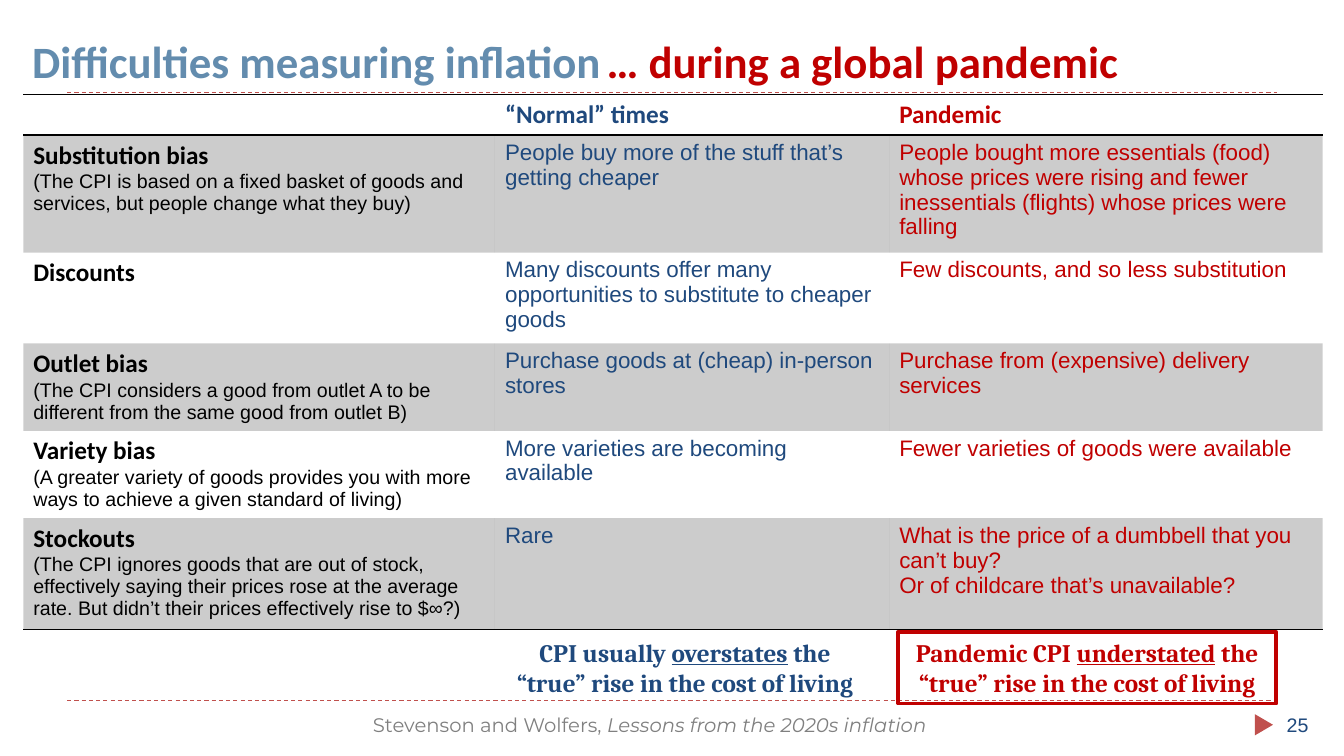
import pptx
import pptx.dml.color
import pptx.enum.dml
import pptx.enum.shapes
import pptx.enum.text
import pptx.oxml
import pptx.oxml.ns
import pptx.util

COLORS = {"ink": "000000", "navy": "1F497D", "red": "C00000",
          "steel": "638CAE", "rose": "C0504D", "gray": "808080"}
ALIGN = pptx.enum.text.PP_ALIGN
SHAPE = pptx.enum.shapes.MSO_SHAPE
PLAIN = "{2D5ABB26-0587-4C30-8999-92F81FD0307C}"


def rgb(name):
    return pptx.dml.color.RGBColor.from_string(COLORS[name])


def node(tag, **attrs):
    item = pptx.oxml.parse_xml(f"<a:{tag} {pptx.oxml.ns.nsdecls('a')}/>")
    for key, value in attrs.items():
        item.set(key, str(value))
    return item


def write(para, text, size=16, face="Arial", color="ink", bold=False,
          italic=False, under=False):
    run = para.add_run()
    run.text = text
    font = run.font
    font.size = pptx.util.Pt(size)
    font.name = face
    font.bold = bold
    font.italic = italic
    font.underline = under
    font.color.rgb = rgb(color)


class Page:
    head = {"size": 18, "face": "Calibri", "bold": True}
    title = {"size": 32, "face": "Calibri", "bold": True}
    foot = {"size": 14, "face": "Montserrat", "color": "gray"}
    note = {"size": 18, "face": "Cambria", "bold": True}

    def __init__(self):
        self.deck = pptx.Presentation()
        self.deck.slide_width = pptx.util.Inches(13.33)
        self.deck.slide_height = pptx.util.Inches(7.5)
        self.slide = self.deck.slides.add_slide(self.deck.slide_layouts[6])
        self.shapes = self.slide.shapes

    def col(self, share):
        return round(self.deck.slide_width * share / 100)

    def row(self, share):
        return round(self.deck.slide_height * share / 100)

    def area(self, left, top, width, height):
        return self.col(left), self.row(top), self.col(width), self.row(height)

    def rule(self, top):
        line = self.shapes.add_connector(
            pptx.enum.shapes.MSO_CONNECTOR.STRAIGHT,
            self.col(5), self.row(top), self.col(95), self.row(top))
        line.line.color.rgb = rgb("rose")
        line.line.width = pptx.util.Pt(0.75)
        line.line.dash_style = pptx.enum.dml.MSO_LINE.DASH
        line._element.spPr.append(node("effectLst"))

    def arrow(self, *area):
        mark = self.shapes.add_shape(SHAPE.ISOSCELES_TRIANGLE, *self.area(*area))
        mark.rotation = 90
        mark.shadow.inherit = False
        mark.fill.solid()
        mark.fill.fore_color.rgb = rgb("rose")
        mark.line.fill.background()

    def fill(self, frame, parts, style, align=ALIGN.LEFT, low=False):
        frame.word_wrap = True
        anchor = pptx.enum.text.MSO_ANCHOR
        frame.vertical_anchor = anchor.BOTTOM if low else anchor.TOP
        para = frame.paragraphs[0]
        para.alignment = align
        for text, extra in parts:
            write(para, text, **{**style, **extra})

    def text(self, area, parts, style, **place):
        box = self.shapes.add_textbox(*self.area(*area))
        self.fill(box.text_frame, parts, style, **place)

    def verdict(self, left, start, word, color, frame=False):
        area = left, 83.6, 28.13, 9.47
        parts = [(start, {}), (word, {"under": True}),
                 (" the “true” rise in the cost of living", {})]
        style = {**self.note, "color": color}
        if not frame:
            self.text(area, parts, style, align=ALIGN.CENTER)
            return
        box = self.shapes.add_shape(SHAPE.RECTANGLE, *self.area(*area))
        box.shadow.inherit = False
        box.fill.background()
        box.line.color.rgb = rgb(color)
        box.line.width = pptx.util.Pt(2.75)
        self.fill(box.text_frame, parts, style, align=ALIGN.CENTER)

    def edge(self, cell, tag):
        line = node(tag, w=pptx.util.Pt(1))
        paint = node("solidFill")
        paint.append(node("srgbClr", val=COLORS["ink"]))
        line.append(paint)
        cell._tc.get_or_add_tcPr().insert(0, line)

    def shade(self, cell, dark):
        if not dark:
            cell.fill.background()
            return
        cell.fill.solid()
        cell.fill.fore_color.rgb = rgb("ink")
        tint = cell._tc.tcPr.find(".//" + pptx.oxml.ns.qn("a:srgbClr"))
        tint.append(node("alpha", val=20000))

    def table(self, left, top, cols, rows, data):
        grid = self.shapes.add_table(
            len(rows), len(cols),
            *self.area(left, top, sum(cols), sum(rows))).table
        grid.first_row = grid.horz_banding = False
        grid._tbl.tblPr.find(pptx.oxml.ns.qn("a:tableStyleId")).text = PLAIN
        for i, width in enumerate(cols):
            grid.columns[i].width = self.col(width)
        for r, height in enumerate(rows):
            grid.rows[r].height = self.row(height)
            for c, lines in enumerate(data[r]):
                cell = grid.cell(r, c)
                self.shade(cell, r % 2 == 1)
                if r in (0, len(rows) - 1):
                    self.edge(cell, "lnB")
                if r == 0:
                    self.edge(cell, "lnT")
                color = ("ink", "navy", "red")[c]
                for i, text in enumerate(lines):
                    frame = cell.text_frame
                    para = frame.paragraphs[0] if i == 0 else frame.add_paragraph()
                    if r == 0 or (c == 0 and i == 0):
                        style = self.head
                    else:
                        style = {"size": 14 if c == 0 else 16}
                    write(para, text, color=color, **style)


DATA = [
    [[], ["“Normal” times"], ["Pandemic"]],
    [["Substitution bias",
      "(The CPI is based on a fixed basket of goods and services, but people change what they buy)"],
     ["People buy more of the stuff that’s getting cheaper"],
     ["People bought more essentials (food) whose prices were rising and fewer "
      "inessentials (flights) whose prices were falling"]],
    [["Discounts"],
     ["Many discounts offer many opportunities to substitute to cheaper goods"],
     ["Few discounts, and so less substitution"]],
    [["Outlet bias",
      "(The CPI considers a good from outlet A to be different from the same good from outlet B)"],
     ["Purchase goods at (cheap) in-person stores"],
     ["Purchase from (expensive) delivery services"]],
    [["Variety bias",
      "(A greater variety of goods provides you with more ways to achieve a given standard of living)"],
     ["More varieties are becoming available"],
     ["Fewer varieties of goods were available"]],
    [["Stockouts",
      "(The CPI ignores goods that are out of stock, effectively saying their prices rose "
      "at the average rate. But didn’t their prices effectively rise to $∞?)"],
     ["Rare"],
     ["What is the price of a dumbbell that you can’t buy?",
      "Or of childcare that’s unavailable?"]],
]


def main():
    page = Page()
    for top in (92.67, 12.27):
        page.rule(top)
    page.arrow(93.25, 94.67, 1.58, 2.4)
    page.text((1.65, 2.27, 96.7, 10),
              [("Difficulties measuring inflation", {"color": "steel"})],
              page.title, low=True)
    page.text((5, 93.6, 86.7, 5.33),
              [("Stevenson and Wolfers, ", {}),
               ("Lessons from the 2020s inflation", {"italic": True})],
              page.foot, align=ALIGN.CENTER)
    page.text((95, 93.6, 5, 5.33), [("25", {})], {"size": 14, "color": "navy"})
    page.table(1.73, 12.53, (35.1, 29.33, 32.25),
               (4.53, 13.2, 10.13, 9.73, 9.73, 12.4), DATA)
    page.verdict(36.9, "CPI usually ", "overstates", "navy")
    page.verdict(66.83, "Pandemic CPI ", "understated", "red", frame=True)
    page.text((44.4, 2.27, 54, 10),
              [("… during a global pandemic", {"color": "red"})],
              page.title, low=True)
    page.deck.save("out.pptx")


if __name__ == "__main__":
    main()
